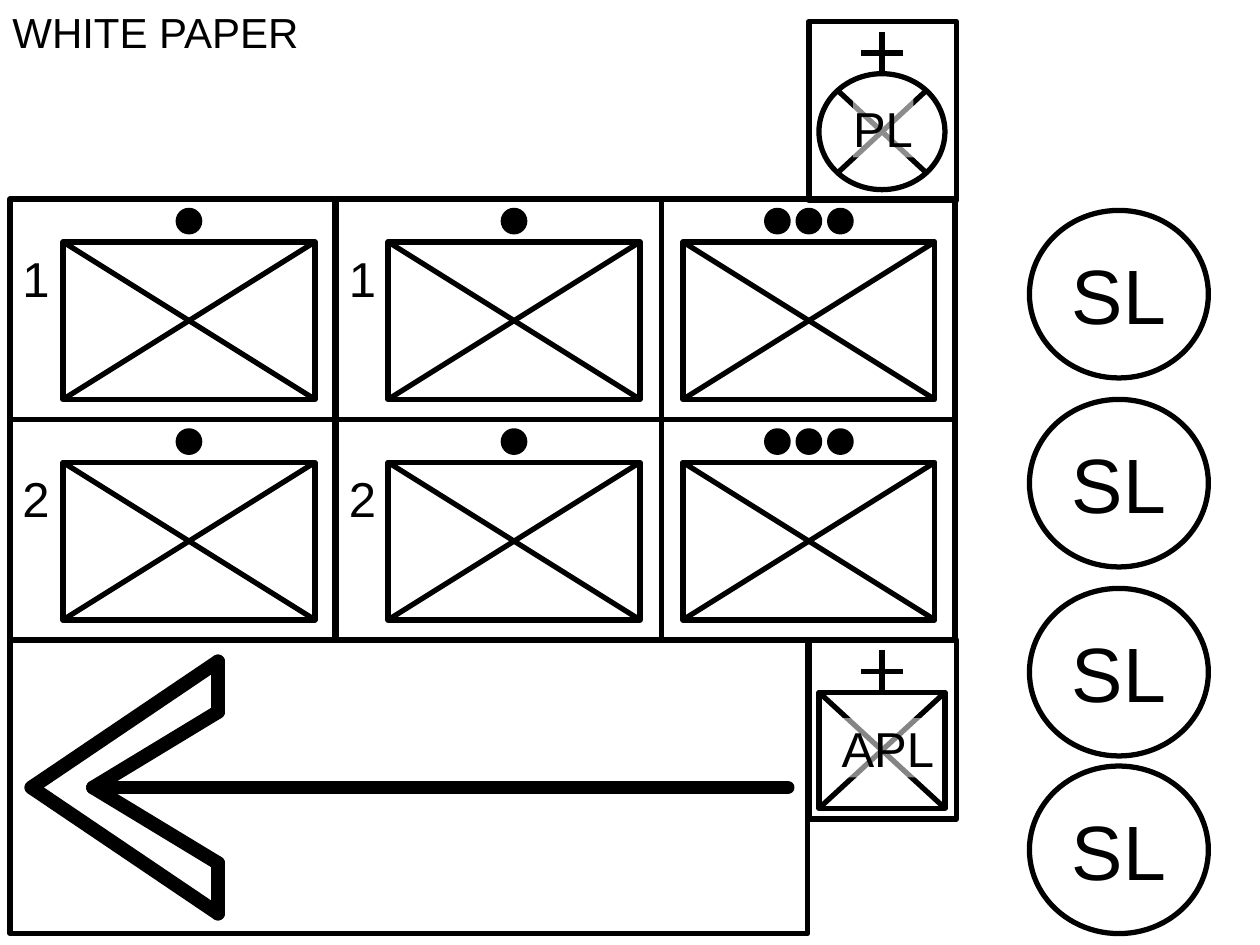
from lxml.etree import SubElement
from pptx import Presentation
from pptx.dml.color import RGBColor
from pptx.enum.shapes import MSO_CONNECTOR, MSO_SHAPE
from pptx.enum.text import MSO_ANCHOR, MSO_AUTO_SIZE, PP_ALIGN
from pptx.oxml.ns import qn
from pptx.util import Inches, Pt

BLACK = RGBColor(0, 0, 0)
WHITE = RGBColor(255, 255, 255)
FONT = "Arial"
THIN, THICK = 3, 8

TITLE = "WHITE PAPER"
LEADER_TEXT = "SL"
LEADER_TOPS = [1.67, 3.17, 4.67, 6.08]

# Unit cells: left, width, symbol left, number of dots
UNIT_COLUMNS = [(0.08, 2.58, 0.5, 1), (2.67, 2.58, 3.08, 1), (5.25, 2.33, 5.42, 3)]
# Unit rows: top, number shown beside the single-dot symbols
UNIT_ROWS = [(1.58, "1"), (3.33, "2")]
DOT_SIZE, DOT_STEP = 0.17, 0.25

# Leader cells: label, cell top, symbol, cross inset (x, y), label box, label opacity
COMMAND_CELLS = [
    ("APL", 5.08, MSO_SHAPE.RECTANGLE, (0, 0), (6.68, 5.7, 0.74, 0.47), 52),
    ("PL", 0.17, MSO_SHAPE.OVAL, (0.15, 0.135), (6.77, 0.78, 0.48, 0.47), 55),
]

ARROW_AXIS, ARROW_BACK = 6.25, 1.73
ARROW_TIP, ARROW_NOTCH, ARROW_TAIL = 0.25, 0.74, 6.25
OUTER_RISE, INNER_RISE = 1, 0.6


def style_line(shape, width):
    shape.line.color.rgb = BLACK
    shape.line.width = Pt(width)
    line = shape.line._get_or_add_ln()
    SubElement(line, qn("a:round"))
    if width == THICK:
        line.set("cap", "rnd")


def add_outline(shapes, kind, left, top, width, height, fill=None):
    shape = shapes.add_shape(kind, Inches(left), Inches(top), Inches(width), Inches(height))
    shape.shadow.inherit = False
    if fill is None:
        shape.fill.background()
    else:
        shape.fill.solid()
        shape.fill.fore_color.rgb = fill
    style_line(shape, THIN)
    return shape


def add_line(shapes, start, end, width=THIN):
    x1, y1, x2, y2 = (Inches(value) for value in start + end)
    connector = shapes.add_connector(MSO_CONNECTOR.STRAIGHT, x1, y1, x2, y2)
    style_line(connector, width)
    SubElement(connector._element.spPr, qn("a:effectLst"))
    return connector


def write_text(shape, text, size, align=PP_ALIGN.LEFT, anchor=MSO_ANCHOR.TOP, wrap=False):
    frame = shape.text_frame
    frame.word_wrap = wrap
    frame.vertical_anchor = anchor
    paragraph = frame.paragraphs[0]
    paragraph.alignment = align
    run = paragraph.add_run()
    run.text = text
    run.font.name = FONT
    run.font.size = Pt(size)
    run.font.color.rgb = BLACK


def add_label(shapes, text, size, left, top, width, height):
    box = shapes.add_textbox(Inches(left), Inches(top), Inches(width), Inches(height))
    write_text(box, text, size)
    box.text_frame.auto_size = MSO_AUTO_SIZE.SHAPE_TO_FIT_TEXT
    return box


def add_cross(shapes, left, top, width, height):
    right, bottom = left + width, top + height
    add_line(shapes, (left, top), (right, bottom))
    add_line(shapes, (right, top), (left, bottom))


def add_leader(shapes, top):
    circle = add_outline(shapes, MSO_SHAPE.OVAL, 8.17, top, 1.42, 1.33, WHITE)
    write_text(circle, LEADER_TEXT, 44, PP_ALIGN.CENTER, MSO_ANCHOR.MIDDLE, wrap=True)


def add_arrow(shapes):
    notch = (ARROW_NOTCH, ARROW_AXIS)
    tip = (ARROW_TIP, ARROW_AXIS)
    add_line(shapes, notch, (ARROW_TAIL, ARROW_AXIS), THICK)
    for side in (1, -1):
        inner = (ARROW_BACK, ARROW_AXIS + side * INNER_RISE)
        outer = (ARROW_BACK, ARROW_AXIS + side * OUTER_RISE)
        add_line(shapes, notch, inner, THICK)
        add_line(shapes, tip, outer, THICK)
        add_line(shapes, outer, inner, THICK)
    add_outline(shapes, MSO_SHAPE.RECTANGLE, 0.08, 5.08, 6.33, 2.33)


def add_unit(shapes, column, row):
    left, width, symbol_left, dots = column
    top, number = row
    symbol = (symbol_left, top + 0.34, 2, 1.25)
    add_outline(shapes, MSO_SHAPE.RECTANGLE, *symbol)
    add_cross(shapes, *symbol)
    for index in range(dots):
        center = symbol_left + 1 + (index - (dots - 1) / 2) * DOT_STEP
        add_outline(shapes, MSO_SHAPE.OVAL, center - DOT_SIZE / 2, top + 0.09,
                    DOT_SIZE, DOT_SIZE, BLACK)
    if dots == 1:
        add_label(shapes, number, 28, left, top + 0.34, 0.42, 0.57)
    add_outline(shapes, MSO_SHAPE.RECTANGLE, left, top, width, 1.75)


def add_command(shapes, text, top, kind, inset, label_box, opacity):
    left, width, height = 6.5, 1, 0.92
    symbol_top, center = top + 0.415, left + width / 2
    inset_x, inset_y = inset
    symbol = add_outline(shapes, kind, left, symbol_top, width, height)
    add_cross(shapes, left + inset_x, symbol_top + inset_y,
              width - 2 * inset_x, height - 2 * inset_y)
    add_line(shapes, (center + 0.17, top + 0.25), (center - 0.17, top + 0.25))
    stem = add_line(shapes, (center, symbol_top), (center, top + 0.08))
    stem.begin_connect(symbol, 0)

    label = add_label(shapes, text, 28, *label_box)
    frame = label.text_frame
    frame.margin_left = frame.margin_right = frame.margin_top = frame.margin_bottom = 0
    label.fill.solid()
    label.fill.fore_color.rgb = WHITE
    color = label._element.spPr.find(qn("a:solidFill"))[0]
    SubElement(color, qn("a:alpha"), val=str(opacity * 1000))
    add_outline(shapes, MSO_SHAPE.RECTANGLE, 6.42, top, 1.17, 1.42)


def main():
    presentation = Presentation()
    presentation.slide_width, presentation.slide_height = Inches(10), Inches(7.5)
    slide = presentation.slides.add_slide(presentation.slide_layouts[6])
    shapes = slide.shapes

    add_label(shapes, TITLE, 24, 0, 0, 2.49, 0.5)
    for top in LEADER_TOPS:
        add_leader(shapes, top)
    add_arrow(shapes.add_group_shape().shapes)
    for column in UNIT_COLUMNS:
        for row in UNIT_ROWS:
            add_unit(shapes.add_group_shape().shapes, column, row)
    for cell in COMMAND_CELLS:
        add_command(shapes.add_group_shape().shapes, *cell)

    presentation.save("out.pptx")


if __name__ == "__main__":
    main()
